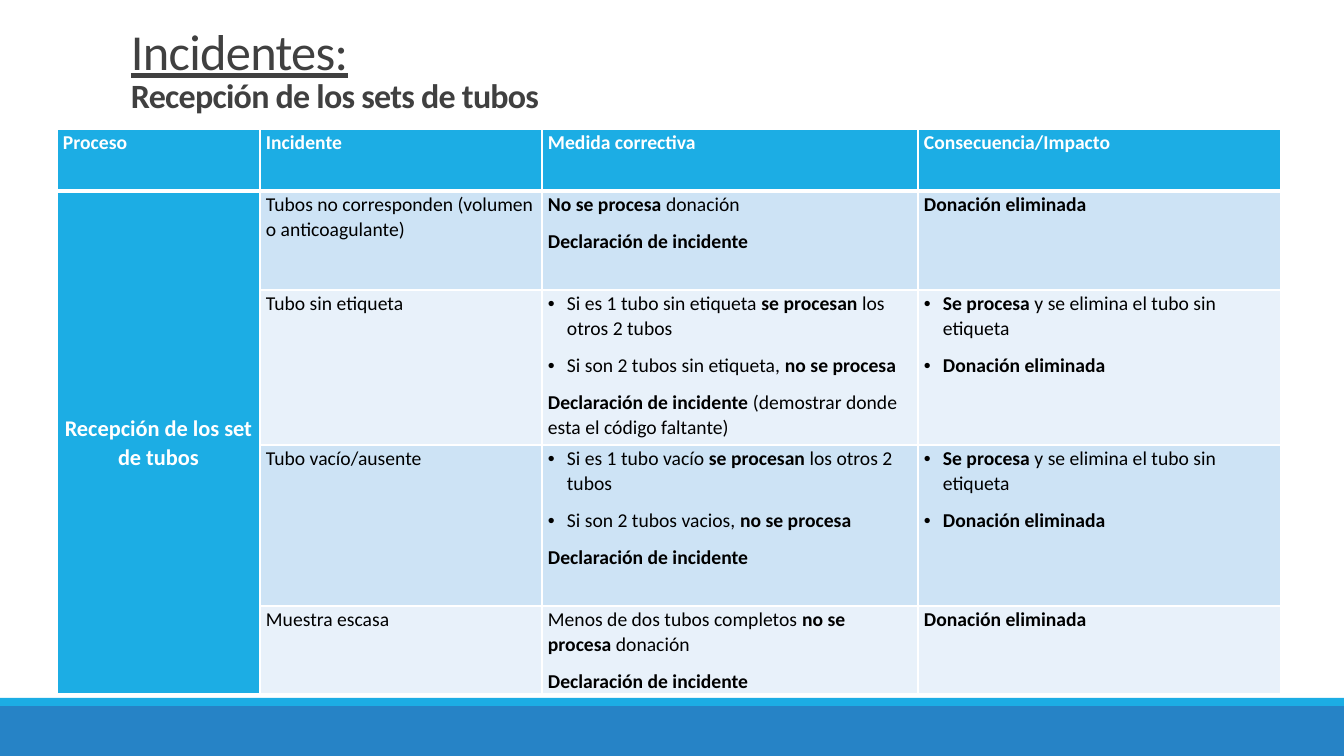
import pptx
import pptx.util
import pptx.dml.color
import pptx.enum.shapes
import pptx.enum.text
import pptx.oxml.ns
import lxml.etree

HEX = {"sky": "1CADE4", "blue": "2683C6", "dark": "CDE3F5", "pale": "E8F1FA",
       "white": "FFFFFF", "black": "000000", "grey": "404040"}
SIZE = (1344, 756)
BARS = [("blue", 706, 50), ("sky", 698, 8)]
TITLE = [("Incidentes:", {"size": 36, "underline": True}),
         ("Recepción de los sets de tubos", {"size": 24.3, "bold": True})]
HEAD = ["Proceso", "Incidente", "Medida correctiva", "Consecuencia/Impacto"]
STAGE = "Recepción de los set de tubos"
REPORT = "*Declaración de incidente*"
LOST = "*Donación eliminada*"
PARTIAL = ["- *Se procesa *y se elimina el tubo sin etiqueta", "- " + LOST]
CASES = [
    (["Tubos no corresponden (volumen o anticoagulante)"],
     ["*No se procesa *donación", REPORT], [LOST]),
    (["Tubo sin etiqueta"],
     ["- Si es 1 tubo sin etiqueta *se procesan *los otros 2 tubos",
      "- Si son 2 tubos sin etiqueta, *no se procesa*",
      "*Declaración de incidente *(demostrar donde esta el código faltante)"], PARTIAL),
    (["Tubo vacío/ausente"],
     ["- Si es 1 tubo vacío *se procesan *los otros 2 tubos",
      "- Si son 2 tubos vacios, *no se procesa*", REPORT], PARTIAL),
    (["Muestra escasa"],
     ["Menos de dos tubos completos *no se procesa *donación", REPORT], [LOST]),
]
COLS = [203, 282, 376, 363]
ROWS = [62, 99, 155, 161, 88]
LEFT, TOP = 57, 129
PAD, HANG = 6, 19


def px(n):
    return pptx.util.Emu(round(n * 914400 / 100.8))


def rgb(name):
    return pptx.dml.color.RGBColor.from_string(HEX[name])


def put(obj, **vals):
    for key, val in vals.items():
        setattr(obj, key, val)


def add(node, tag, **vals):
    return lxml.etree.SubElement(node, pptx.oxml.ns.qn("a:" + tag), vals)


def paint(fill, name):
    fill.solid()
    fill.fore_color.rgb = rgb(name)


def write(para, text, tone, size, **vals):
    run = para.add_run()
    run.text = text
    put(run.font, name="Calibri", size=pptx.util.Pt(size), **vals)
    run.font.color.rgb = rgb(tone)
    return run


def edge(cell, top, base):
    props = cell._tc.get_or_add_tcPr()
    for tag, width in (("lnL", 1), ("lnR", 1), ("lnT", top), ("lnB", base)):
        line = add(props, tag, w=str(pptx.util.Pt(width)))
        add(add(line, "solidFill"), "srgbClr", val=HEX["white"])


def fill_cell(cell, lines, tone, size=14, align=None):
    put(cell, margin_left=px(PAD), margin_right=px(PAD), margin_top=0, margin_bottom=0)
    frame = cell.text_frame
    for i, line in enumerate(lines):
        para = frame.add_paragraph() if i else frame.paragraphs[0]
        if line.startswith("- "):
            line = line[2:]
            props = para._p.get_or_add_pPr()
            props.set("marL", str(px(HANG)))
            props.set("indent", str(-px(HANG)))
            add(props, "buFont", typeface="Arial")
            add(props, "buChar", char="•")
        put(para, line_spacing=1.07, space_after=pptx.util.Pt(8), alignment=align)
        for j, part in enumerate(line.split("*")):
            if part:
                write(para, part, tone, size, bold=j % 2 == 1)


def add_bars(slide):
    for tone, top, high in BARS:
        bar = slide.shapes.add_shape(pptx.enum.shapes.MSO_SHAPE.RECTANGLE,
                                     0, px(top), px(SIZE[0]), px(high))
        bar.shadow.inherit = False
        paint(bar.fill, tone)
        bar.line.fill.background()


def add_title(slide):
    frame = slide.shapes.add_textbox(px(131), px(29), px(1089), px(90)).text_frame
    put(frame, word_wrap=True, margin_left=0, margin_right=0, margin_top=0, margin_bottom=0)
    for i, (text, look) in enumerate(TITLE):
        para = frame.add_paragraph() if i else frame.paragraphs[0]
        para.line_spacing = 0.85
        run = write(para, text, "grey", **look)
        run._r.get_or_add_rPr().set("spc", "-50")


def add_grid(slide):
    grid = slide.shapes.add_table(len(ROWS), len(COLS), px(LEFT), px(TOP),
                                  px(sum(COLS)), px(sum(ROWS))).table
    put(grid, first_row=False, horz_banding=False)
    for col, width in zip(grid.columns, COLS):
        col.width = px(width)
    for r, high in enumerate(ROWS):
        grid.rows[r].height = px(high)
        for c in range(len(COLS)):
            cell = grid.cell(r, c)
            edge(cell, 3 if r == 1 else 1, 1 if r else 3)
            paint(cell.fill, "sky" if r * c == 0 else "dark" if r % 2 else "pale")
            if r == 0:
                fill_cell(cell, ["*" + HEAD[c] + "*"], "white")
            elif c:
                fill_cell(cell, CASES[r - 1][c - 1], "black")
    stage = grid.cell(1, 0)
    stage.merge(grid.cell(len(CASES), 0))
    stage.vertical_anchor = pptx.enum.text.MSO_ANCHOR.MIDDLE
    fill_cell(stage, ["*" + STAGE + "*"], "white", 16, pptx.enum.text.PP_ALIGN.CENTER)


def main():
    deck = pptx.Presentation()
    put(deck, slide_width=px(SIZE[0]), slide_height=px(SIZE[1]))
    slide = deck.slides.add_slide(deck.slide_layouts[6])
    add_bars(slide)
    add_title(slide)
    add_grid(slide)
    deck.save("out.pptx")


if __name__ == "__main__":
    main()
